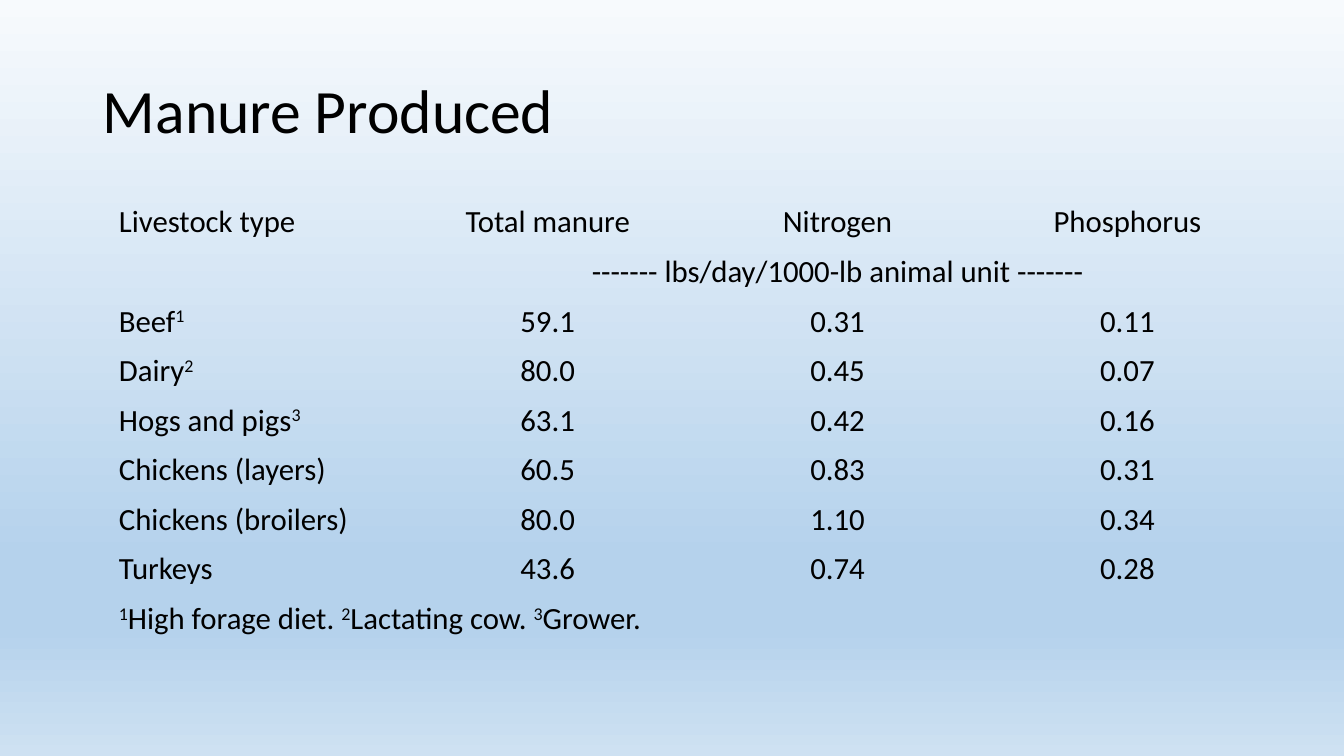
from dataclasses import dataclass

from lxml import etree
from pptx import Presentation
from pptx.dml.color import RGBColor
from pptx.enum import text
from pptx.oxml import ns
from pptx.util import Inches, Pt


@dataclass(frozen=True)
class Theme:
    """Hold the colours, font and type sizes of the slide."""
    font: str = "Calibri"
    ink: RGBColor = RGBColor(0, 0, 0)
    title: int = 44
    body: int = 22
    sky: tuple = ((0, "F7FAFD"), (74, "B5D2EC"), (83, "B5D2EC"), (100, "CEE1F2"))


THEME = Theme()
NO_GRID = "{2D5ABB26-0587-4C30-8999-92F81FD0307C}"
ROWS = [
    ("Livestock type", "Total manure", "Nitrogen", "Phosphorus"),
    ("", "------- lbs/day/1000-lb animal unit -------"),
    ("Beef^1", "59.1", "0.31", "0.11"),
    ("Dairy^2", "80.0", "0.45", "0.07"),
    ("Hogs and pigs^3", "63.1", "0.42", "0.16"),
    ("Chickens (layers)", "60.5", "0.83", "0.31"),
    ("Chickens (broilers)", "80.0", "1.10", "0.34"),
    ("Turkeys", "43.6", "0.74", "0.28"),
    ("^1High forage diet. ^2Lactating cow. ^3Grower.",),
]


def style(font, size):
    """Apply the theme's font and colour at the given size."""
    font.name, font.size = THEME.font, Pt(size)
    font.color.rgb = THEME.ink


def set_background(s):
    """Fill the slide with the theme's vertical gradient."""
    fill = s.background.fill
    fill.gradient()
    fill.gradient_angle = 270
    stops = next(s.element.iter(ns.qn("a:gsLst")))
    for stop in list(stops):
        stops.remove(stop)
    for pos, color in THEME.sky:
        stop = etree.SubElement(stops, ns.qn("a:gs"), pos=str(pos * 1000))
        etree.SubElement(stop, ns.qn("a:srgbClr"), val=color)


def set_title(s, words):
    """Place and format the slide title."""
    sp = s.shapes.title
    sp.left, sp.top = Inches(0.92), Inches(0.4)
    sp.width, sp.height = Inches(11.5), Inches(1.45)
    tf = sp.text_frame
    tf.text = words
    tf.vertical_anchor = text.MSO_ANCHOR.MIDDLE
    p = tf.paragraphs[0]
    p.alignment, p.line_spacing = text.PP_ALIGN.LEFT, 0.9
    style(p.runs[0].font, THEME.title)


def add_run(p, words, raised=False):
    """Add a run of body text, raised if it is a note mark."""
    if words:
        r = p.add_run()
        r.text = words
        style(r.font, THEME.body)
        if raised:
            r.font._element.set("baseline", "30000")


def fill_cell(cell, words, align):
    """Write a cell, raising the character that follows each caret."""
    cell.fill.background()
    cell.vertical_anchor = text.MSO_ANCHOR.MIDDLE
    cell.margin_left = cell.margin_right = Inches(0.06)
    cell.margin_top = cell.margin_bottom = Inches(0.06)
    p = cell.text_frame.paragraphs[0]
    p.alignment = align
    p.font.size = Pt(THEME.body)
    plain, *noted = words.split("^")
    add_run(p, plain)
    for part in noted:
        add_run(p, part[0], raised=True)
        add_run(p, part[1:])


def add_manure_table(s, rows):
    """Add the table; the last entry of a short row spans to the right edge."""
    cols = len(rows[0])
    frame = s.shapes.add_table(len(rows), cols, Inches(1.12), Inches(1.96),
                               Inches(11.5), Inches(0.49) * len(rows))
    table = frame.table
    table.first_row = table.horz_banding = False
    next(table._tbl.iter(ns.qn("a:tableStyleId"))).text = NO_GRID
    for i, row in enumerate(rows):
        if len(row) < cols:
            table.cell(i, len(row) - 1).merge(table.cell(i, cols - 1))
        for j, words in enumerate(row):
            align = text.PP_ALIGN.CENTER if j else text.PP_ALIGN.LEFT
            fill_cell(table.cell(i, j), words, align)


def main():
    """Build and save the slide."""
    prs = Presentation()
    prs.slide_width, prs.slide_height = Inches(13.33), Inches(7.5)
    s = prs.slides.add_slide(prs.slide_layouts[5])
    set_background(s)
    set_title(s, "Manure Produced")
    add_manure_table(s, ROWS)
    prs.save("out.pptx")


if __name__ == "__main__":
    main()
